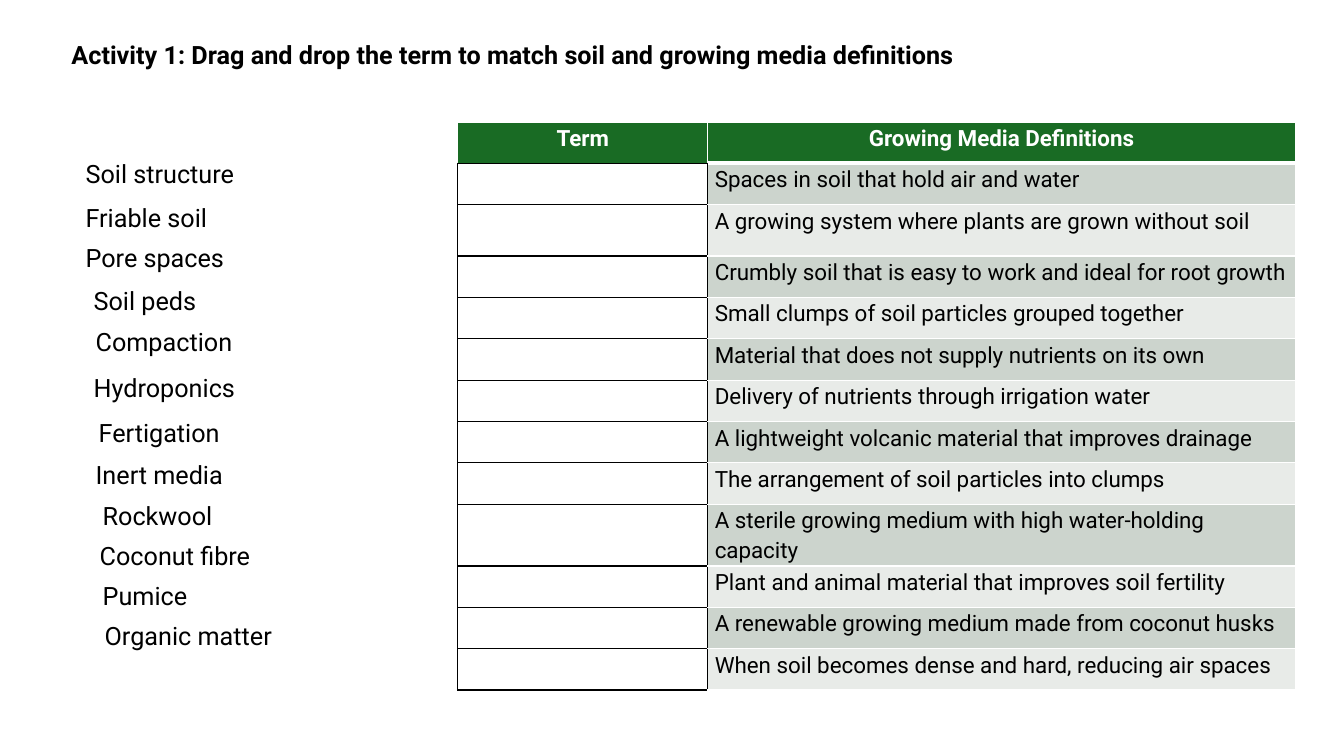
from lxml import etree
from pptx import Presentation, util as u
from pptx.dml.color import RGBColor
from pptx.enum import text
from pptx.oxml import ns

COLORS = {
    "ink": "000000",
    "paper": "FFFFFF",
    "header": "196B24",
    "dark band": "CCD4CD",
    "light band": "E8EBE8",
}

# Each draggable term with its left and top, in percent of the slide
TERMS = [
    ("Soil structure", 5.63, 19.73),
    ("Friable soil", 5.63, 25.47),
    ("Pore spaces", 5.63, 30.8),
    ("Soil peds", 6.23, 36.53),
    ("Compaction", 6.38, 41.87),
    ("Hydroponics", 6.23, 48),
    ("Fertigation", 6.6, 54),
    ("Inert media", 6.38, 59.47),
    ("Rockwool", 6.9, 64.93),
    ("Coconut fibre", 6.68, 70.27),
    ("Pumice", 6.9, 75.47),
    ("Organic matter", 7.05, 80.8),
]

DEFINITIONS = [
    "Spaces in soil that hold air and water",
    "A growing system where plants are grown without soil",
    "Crumbly soil that is easy to work and ideal for root growth",
    "Small clumps of soil particles grouped together",
    "Material that does not supply nutrients on its own",
    "Delivery of nutrients through irrigation water",
    "A lightweight volcanic material that improves drainage",
    "The arrangement of soil particles into clumps",
    "A sterile growing medium with high water-holding capacity",
    "Plant and animal material that improves soil fertility",
    "A renewable growing medium made from coconut husks",
    "When soil becomes dense and hard, reducing air spaces",
]


class ActivityPage:
    """Draws on one slide; lengths are percentages of its width and height."""

    font = "Roboto"
    spacing = 1.15

    def __init__(self, deck):
        self.deck = deck
        self.page = deck.slides.add_slide(deck.slide_layouts[6])

    def across(self, share):
        return round(self.deck.slide_width * share / 100)

    def down(self, share):
        return round(self.deck.slide_height * share / 100)

    def add_words(self, frame, words, size=18, color="ink", bold=False,
                  align=text.PP_ALIGN.LEFT, spacing=spacing, after=6):
        para = frame.paragraphs[0]
        para.alignment = align
        para.line_spacing = spacing
        para.space_before = u.Pt(0)
        para.space_after = u.Pt(after)
        span = para.add_run()
        span.text = words
        span.font.name = self.font
        span.font.size = u.Pt(size)
        span.font.bold = bold
        span.font.color.rgb = RGBColor.from_string(COLORS[color])

    def label(self, words, left, top, width=15, height=5.73, inset=0.05, **style):
        box = self.page.shapes.add_textbox(
            self.across(left), self.down(top), self.across(width), self.down(height))
        frame = box.text_frame
        frame.word_wrap = True
        frame.margin_top = u.Inches(inset)
        self.add_words(frame, words, **style)

    def table(self, left, top, columns, rows):
        frame = self.page.shapes.add_table(
            len(rows), len(columns), self.across(left), self.down(top),
            self.across(sum(columns)), self.down(sum(rows)))
        grid = frame.table
        grid.first_row = grid.horz_banding = False
        for column, width in zip(grid.columns, columns):
            column.width = self.across(width)
        for row, height in zip(grid.rows, rows):
            row.height = self.down(height)
        return grid

    def cell(self, cell, borders, fill=None, words="", **style):
        """Style a cell; borders maps L, R, T and B to (color, points)."""
        cell.margin_left = cell.margin_right = u.Inches(0.07)
        cell.margin_top = cell.margin_bottom = 0
        if fill:
            cell.fill.solid()
            cell.fill.fore_color.rgb = RGBColor.from_string(COLORS[fill])
        else:
            cell.fill.background()
        if words:
            self.add_words(cell.text_frame, words, size=16, **style)
        properties = cell._tc.get_or_add_tcPr()
        for index, side in enumerate("LRTB"):
            color, points = borders[side]
            line = etree.Element(ns.qn(f"a:ln{side}"), w=str(u.Pt(points)))
            solid = etree.SubElement(line, ns.qn("a:solidFill"))
            etree.SubElement(solid, ns.qn("a:srgbClr"), val=COLORS[color])
            properties.insert(index, line)


def main():
    deck = Presentation()
    deck.slide_width, deck.slide_height = u.Inches(13.33), u.Inches(7.5)
    activity = ActivityPage(deck)

    activity.label(
        "Activity 1: Drag and drop the term to match soil and growing media definitions",
        4.58, 5.33, 67.67, 9.33, inset=0.02, bold=True, spacing=0.9, after=0)

    heights = [5.47] * (len(DEFINITIONS) + 1)
    heights[2] = 6.8
    grid = activity.table(34.06, 16.13, [18.6, 43.74], heights)

    black = dict.fromkeys("LRTB", ("ink", 1))
    white = dict.fromkeys("LRTB", ("paper", 1))
    headings = [("Term", ("ink", 1)), ("Growing Media Definitions", ("paper", 3))]
    for column, (heading, bottom) in enumerate(headings):
        activity.cell(grid.cell(0, column), white | {"B": bottom}, "header", heading,
                      color="paper", bold=True, align=text.PP_ALIGN.CENTER)
    for row, definition in enumerate(DEFINITIONS, start=1):
        band = "dark band" if row % 2 else "light band"
        top = ("paper", 3 if row == 1 else 1)
        activity.cell(grid.cell(row, 0), black)
        activity.cell(grid.cell(row, 1), white | {"L": ("ink", 1), "T": top},
                      band, definition)

    for term, left, top in TERMS:
        activity.label(term, left, top)

    deck.save("out.pptx")


if __name__ == "__main__":
    main()
